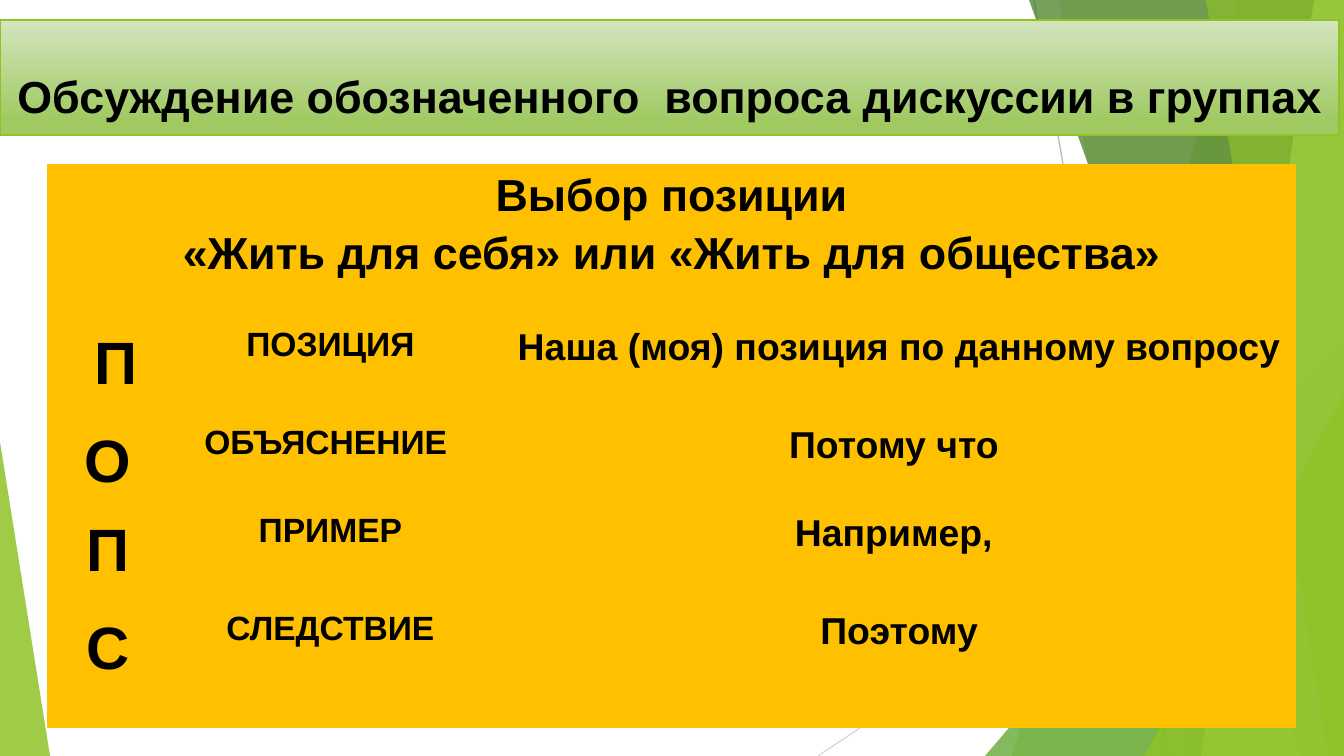
from lxml.etree import SubElement
from pptx import Presentation
from pptx.dml.color import RGBColor
from pptx.enum.shapes import MSO_CONNECTOR, MSO_SHAPE
from pptx.enum.text import MSO_ANCHOR, PP_ALIGN
from pptx.oxml.ns import qn
from pptx.util import Pt

WIDE, HIGH = 1344, 756
SCALE = 9144000 / WIDE
FONT = "Arial"
NO_GRID = "{2D5ABB26-0587-4C30-8999-92F81FD0307C}"
HUES = {
    "lime": "90C226", "leaf": "54A021", "moss": "3F7819", "pale": "C0E474",
    "gray": "BFBFBF", "mist": "D9D9D9", "top": "D3E5BE", "base": "A0C962",
    "gold": "FFC000", "ink": "000000",
}
COLS = [122, 323, 804]
ROWS = [156, 98, 89, 98, 123]
HEAD = ["Выбор позиции", "«Жить для себя» или «Жить для общества»"]
STEPS = [
    (" П", "ПОЗИЦИЯ", " Наша (моя) позиция по данному вопросу"),
    ("О", "ОБЪЯСНЕНИЕ ", " Потому что "),
    ("П", "ПРИМЕР", " Например, "),
    ("С", "СЛЕДСТВИЕ", " Поэтому"),
]
SIZES = [32, 18, 20]


def px(n):
    return round(n * SCALE)


def hue(name):
    return RGBColor.from_string(HUES[name])


def paint(shape, name, alpha):
    """Flat see-through fill, no outline, no shadow."""
    shape.shadow.inherit = False
    shape.line.fill.background()
    shape.fill.solid()
    shape.fill.fore_color.rgb = hue(name)
    color = shape.fill._xPr.find(qn("a:solidFill"))[0]
    SubElement(color, qn("a:alpha"), val=str(alpha * 1000))


def add_line(slide, ends, name):
    line = slide.shapes.add_connector(MSO_CONNECTOR.STRAIGHT, *map(px, ends))
    line.line.color.rgb = hue(name)
    line.line.width = Pt(0.75)
    SubElement(line._element.spPr, qn("a:effectLst"))


def add_band(slide, top, foot, name, alpha):
    """Band from a slanted left edge to the right side of the slide."""
    pen = slide.shapes.build_freeform(top, 0, scale=SCALE)
    pen.add_line_segments([(WIDE, 0), (WIDE, HIGH), (foot, HIGH)], close=True)
    paint(pen.convert_to_shape(), name, alpha)


def add_wedge(slide, left, top, width, peak, name, alpha):
    """Right triangle standing on the lower edge of the slide."""
    box = map(px, (left, top, width, HIGH - top))
    wedge = slide.shapes.add_shape(MSO_SHAPE.ISOSCELES_TRIANGLE, *box)
    wedge.adjustments[0] = peak
    paint(wedge, name, alpha)


def add_text(par, text, size):
    par.alignment = PP_ALIGN.CENTER
    run = par.add_run()
    run.text = text
    run.font.name = FONT
    run.font.size = Pt(size)
    run.font.bold = True
    run.font.color.rgb = hue("ink")
    return run


def add_title(slide, text):
    bar = slide.shapes.add_shape(
        MSO_SHAPE.RECTANGLE, *map(px, (0, 20, 1339, 115)))
    bar.shadow.inherit = False
    bar.line.color.rgb = hue("lime")
    bar.line.width = Pt(1)
    bar.fill.gradient()
    bar.fill.gradient_angle = 270
    for stop, name, place in zip(bar.fill.gradient_stops,
                                 ("top", "base"), (0, 0.88)):
        stop.color.rgb = hue(name)
        stop.position = place
    frame = bar.text_frame
    frame.word_wrap = True
    frame.vertical_anchor = MSO_ANCHOR.MIDDLE
    frame.margin_left = frame.margin_right = px(7)
    frame.margin_top, frame.margin_bottom = px(40), px(3)
    add_text(frame.paragraphs[0], text, 24)


def fill_cell(cell, lines, size):
    cell.margin_left = cell.margin_right = px(7)
    cell.margin_top = cell.margin_bottom = 0
    frame = cell.text_frame
    for i, text in enumerate(lines):
        par = frame.add_paragraph() if i else frame.paragraphs[0]
        par.line_spacing = 1.15
        add_text(par, text, size)


def add_grid(slide):
    box = map(px, (47, 164, sum(COLS), sum(ROWS)))
    grid = slide.shapes.add_table(len(ROWS), len(COLS), *box).table
    grid.first_row = grid.horz_banding = False
    grid._tbl.tblPr.find(qn("a:tableStyleId")).text = NO_GRID
    for col, width in zip(grid.columns, COLS):
        col.width = px(width)
    for row, height in zip(grid.rows, ROWS):
        row.height = px(height)
    for cell in grid.iter_cells():
        cell.fill.solid()
        cell.fill.fore_color.rgb = hue("gold")

    # Heading across all columns, then one row per step
    grid.cell(0, 0).merge(grid.cell(0, len(COLS) - 1))
    fill_cell(grid.cell(0, 0), HEAD, 24)
    for r, step in enumerate(STEPS, 1):
        for c, (text, size) in enumerate(zip(step, SIZES)):
            fill_cell(grid.cell(r, c), [text], size)


def main():
    deck = Presentation()
    deck.slide_width, deck.slide_height = px(WIDE), px(HIGH)
    slide = deck.slides.add_slide(deck.slide_layouts[6])

    # Backdrop of lines and green facets
    add_line(slide, (1034, 0, 1168, HIGH), "gray")
    add_line(slide, (WIDE, 406, 818, HIGH), "mist")
    add_band(slide, 1238, 1012, "lime", 30)
    add_band(slide, 1059, 1192, "lime", 20)
    add_wedge(slide, 985, 336, 359, 1, "leaf", 72)
    add_band(slide, 1029, 1301, "moss", 70)
    add_band(slide, 1314, 1201, "pale", 70)
    add_band(slide, 1206, 1328, "lime", 65)
    add_wedge(slide, 1144, 395, 200, 1, "lime", 80)
    add_wedge(slide, 0, 442, 50, 0, "lime", 85)

    # Content
    add_title(slide, "Обсуждение обозначенного  вопроса дискуссии в группах")
    add_grid(slide)
    deck.save("out.pptx")


if __name__ == "__main__":
    main()
